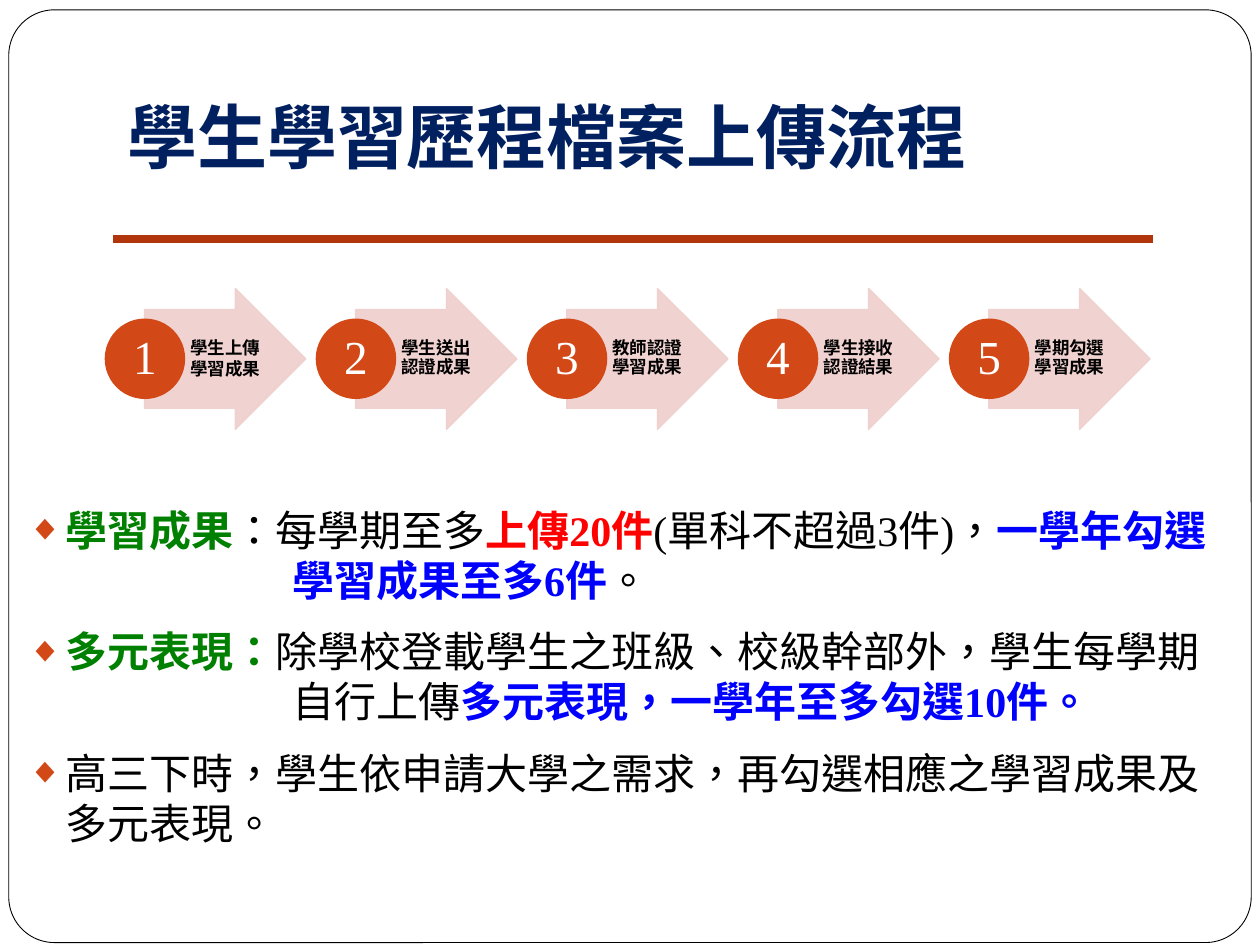
from lxml.etree import SubElement
from pptx import Presentation
from pptx.dml.color import RGBColor
from pptx.enum.lang import MSO_LANGUAGE_ID
from pptx.enum.shapes import MSO_CONNECTOR, MSO_SHAPE
from pptx.enum.text import MSO_ANCHOR, MSO_AUTO_SIZE, PP_ALIGN
from pptx.oxml.ns import qn
from pptx.util import Pt

COLORS = {
    "white": "FFFFFF", "black": "000000", "navy": "002060", "rust": "B1360B",
    "orange": "D34817", "pink": "EFCFCC", "green": "008000", "red": "FF0000",
    "blue": "0000FF",
}
SERIF, SANS, HEAD = "Times New Roman", "Noto Sans CJK SC", "Roboto"

STEPS = ["學生上傳學習成果", "學生送出認證成果", "教師認證學習成果",
         "學生接收認證結果", "學期勾選學習成果"]
STEP = 120.6

# Each item: has a bullet, then runs of (text, color, bold)
ITEMS = [
    (True, [("學習成果", "green", True), ("：每學期至多", "black", False),
            ("上傳20件", "red", True), ("(單科不超過3件)，", "black", False),
            ("一學年勾選", "blue", True)]),
    (False, [("學習成果至多6件", "blue", True), ("。", "black", False)]),
    (True, [("多元表現：", "green", True),
            ("除學校登載學生之班級、校級幹部外，學生每學期", "black", False)]),
    (False, [("自行上傳", "black", False),
             ("多元表現，一學年至多勾選10件。", "blue", True)]),
    (True, [("高三下時，學生依申請大學之需求，再勾選相應之學習成果及多元表現。",
             "black", False)]),
]


def rgb(name):
    return RGBColor.from_string(COLORS[name])


def fade(shape, percent):
    """Set the opacity of the fill and line of a shape."""
    for color in shape.element.spPr.iter(qn("a:srgbClr")):
        SubElement(color, qn("a:alpha"), val=str(percent * 1000))


class Deck:
    def __init__(self):
        self.prs = Presentation()
        self.prs.slide_width, self.prs.slide_height = Pt(720), Pt(540)
        self.slide = self.prs.slides.add_slide(self.prs.slide_layouts[1])
        self.shapes = self.slide.shapes

    def font(self, para, face, size, color=None, bold=None):
        font = para.font
        font.name, font.size, font.bold = face, Pt(size), bold
        font.language_id = MSO_LANGUAGE_ID.TRADITIONAL_CHINESE
        if color:
            font.color.rgb = rgb(color)

    def frame(self, shape, anchor, insets):
        frame = shape.text_frame
        frame.word_wrap, frame.auto_size = True, MSO_AUTO_SIZE.NONE
        frame.vertical_anchor = anchor
        (frame.margin_left, frame.margin_top,
         frame.margin_right, frame.margin_bottom) = map(Pt, insets)
        return frame

    def place(self, shape, box):
        shape.left, shape.top, shape.width, shape.height = map(Pt, box)

    def shape(self, kind, box, fill, line=None, width=0.75, adjust=()):
        shape = self.shapes.add_shape(kind, *map(Pt, box))
        shape.shadow.inherit = False
        for i, value in enumerate(adjust):
            shape.adjustments[i] = value
        shape.fill.solid()
        shape.fill.fore_color.rgb = rgb(fill)
        if line:
            shape.line.color.rgb, shape.line.width = rgb(line), Pt(width)
        else:
            shape.line.fill.background()
        return shape

    def border(self, box):
        shape = self.shape(MSO_SHAPE.ROUNDED_RECTANGLE, box, "white",
                           "black", 0.5, [0.049])
        # Behind the placeholders: first after the two group headers
        shape.element.getparent().insert(2, shape.element)

    def rule(self, left, right, y):
        line = self.shapes.add_connector(
            MSO_CONNECTOR.STRAIGHT, Pt(left), Pt(y), Pt(right), Pt(y))
        line.line.color.rgb, line.line.width = rgb("rust"), Pt(4.5)
        SubElement(line.element.spPr, qn("a:effectLst"))

    def title(self, text, box):
        title = self.shapes.title
        self.place(title, box)
        frame = self.frame(title, MSO_ANCHOR.BOTTOM, (7.2, 3.6, 7.2, 7.2))
        para = frame.paragraphs[0]
        para.text, para.alignment = text, PP_ALIGN.LEFT
        self.font(para, HEAD, 40, "navy", True)

    def bullet(self, para, shown):
        props = para._p.get_or_add_pPr()
        props.set("marL", str(Pt(21.6 if shown else 151.2)))
        props.set("indent", str(Pt(-21.6 if shown else 0)))
        if not shown:
            SubElement(props, qn("a:buNone"))
            return
        color = SubElement(props, qn("a:buClr"))
        SubElement(color, qn("a:srgbClr"), val=COLORS["orange"])
        SubElement(props, qn("a:buSzPct"), val="85000")
        SubElement(props, qn("a:buChar"), char="◆")

    def body(self, items, box):
        body = self.slide.placeholders[1]
        self.place(body, box)
        frame = self.frame(body, MSO_ANCHOR.MIDDLE, (7.2, 3.6, 7.2, 3.6))
        for i, (shown, runs) in enumerate(items):
            para = frame.add_paragraph() if i else frame.paragraphs[0]
            self.bullet(para, shown)
            para.space_before = Pt(5.8 if shown else 0)
            para.space_after = Pt(0 if shown else 6)
            self.font(para, SERIF, 24)
            for text, color, bold in runs:
                run = para.add_run()
                run.text, run.font.bold = text, bold
                run.font.color.rgb = rgb(color)

    def label(self, shape, text, insets, face, size, color, bold, gap):
        frame = self.frame(shape, MSO_ANCHOR.MIDDLE, insets)
        para = frame.paragraphs[0]
        para.text, para.alignment = text, PP_ALIGN.CENTER
        para.line_spacing = gap
        self.font(para, face, size, color, bold)

    def step(self, num, text):
        x = (num - 1) * STEP
        arrow = self.shape(MSO_SHAPE.RIGHT_ARROW, (82.6 + x, 164.8, 92.2, 80.6),
                           "pink", "pink", adjust=[0.7, 0.5])
        fade(arrow, 90)
        box = self.shapes.add_textbox(
            *map(Pt, (105.8 + x, 176.4, 44.6, 56.2)))
        self.label(box, text, (2, 0.7, 0.7, 0.7), SANS, 10, "black", True,
                   1 if num == 1 else 0.9)
        disc = self.shape(MSO_SHAPE.OVAL, (59.8 + x, 182, 46, 46), "orange")
        self.label(disc, str(num), (1.4,) * 4, SERIF, 27, "white", False, 0.9)


def main():
    deck = Deck()
    deck.border((5, 5.6, 710, 533))
    deck.rule(64.8, 658.8, 136.8)
    deck.title("學生學習歷程檔案上傳流程", (65.5, 31.7, 594, 77))
    deck.body(ITEMS, (8.6, 281.5, 700, 209.5))
    for num, text in enumerate(STEPS, 1):
        deck.step(num, text)
    deck.prs.save("out.pptx")


if __name__ == "__main__":
    main()
